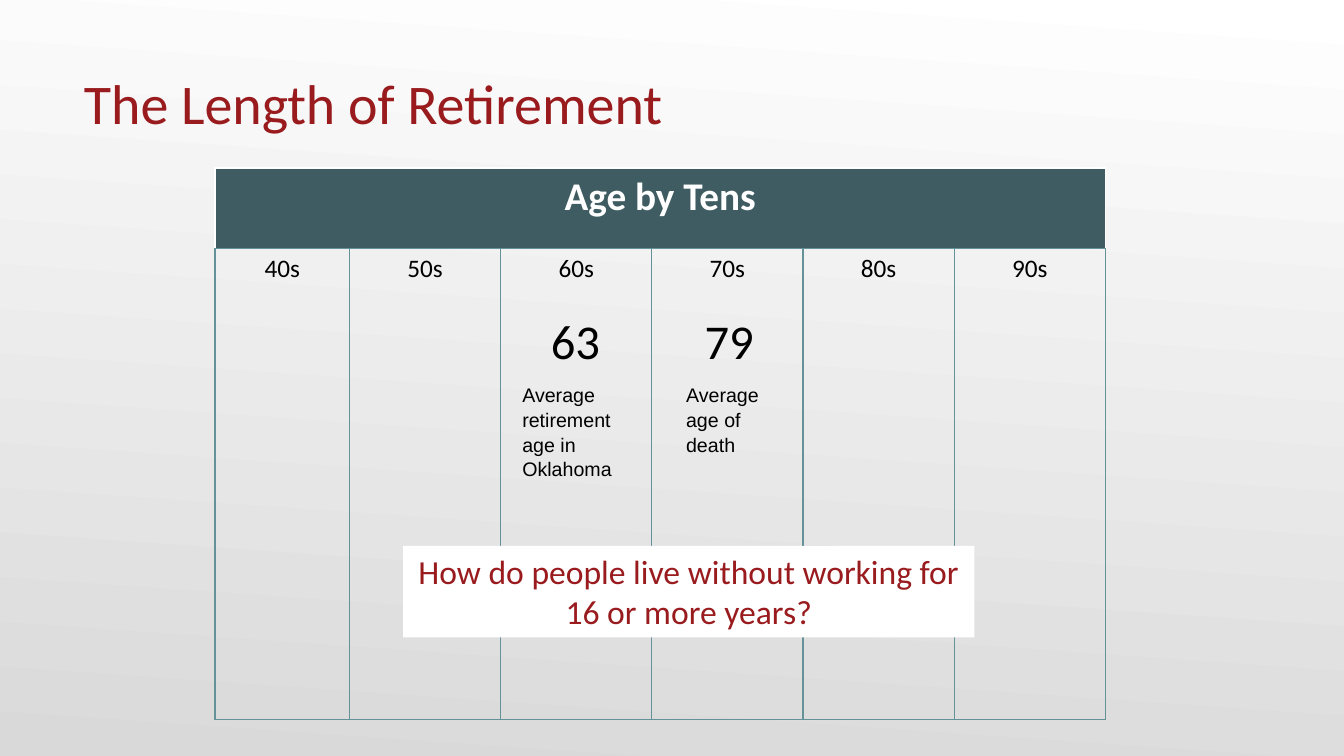
from lxml.etree import SubElement
from pptx import Presentation
from pptx.dml.color import RGBColor
from pptx.enum.shapes import MSO_SHAPE as Shape
from pptx.enum.text import MSO_ANCHOR as Anchor, PP_ALIGN as Align
from pptx.oxml.ns import qn
from pptx.util import Inches, Pt

WHITE = RGBColor(0xFF, 0xFF, 0xFF)
GREY = RGBColor(0xD9, 0xD9, 0xD9)
BLACK = RGBColor(0, 0, 0)
RED = RGBColor(0x99, 0x1B, 0x1E)
TEAL = RGBColor(0x3E, 0x5C, 0x61)
RULE = RGBColor(0x65, 0x92, 0x98)

COLS, ROWS = 160, 90


class Deck:
    """A slide laid out on a grid of COLS by ROWS equal units."""

    def __init__(self):
        self.prs = Presentation()
        self.prs.slide_width, self.prs.slide_height = Inches(13.33), Inches(7.5)
        self.s = self.prs.slides.add_slide(self.prs.slide_layouts[6])

    def x(self, cols):
        return round(self.prs.slide_width * cols / COLS)

    def y(self, rows):
        return round(self.prs.slide_height * rows / ROWS)

    def place(self, left, top, width, height):
        return self.x(left), self.y(top), self.x(width), self.y(height)

    def background(self, start, end, angle):
        fill = self.s.background.fill
        fill.gradient()
        fill.gradient_angle = angle
        for stop, color in zip(fill.gradient_stops, (start, end)):
            stop.color.rgb = color

    def add_words(self, tf, text, size, color, align=Align.CENTER, name="Calibri",
                  bold=False, spacing=1.0):
        p = tf.paragraphs[0]
        p.alignment, p.line_spacing = align, spacing
        r = p.add_run()
        r.text = text
        for key, value in {"size": Pt(size), "name": name, "bold": bold}.items():
            setattr(r.font, key, value)
        r.font.color.rgb = color

    def text(self, at, text, size, color, frame=None, **style):
        tf = self.s.shapes.add_textbox(*self.place(*at)).text_frame
        for key, value in {"word_wrap": True, **(frame or {})}.items():
            setattr(tf, key, value)
        self.add_words(tf, text, size, color, **style)

    def panel(self, at, text, size, color, fill):
        sp = self.s.shapes.add_shape(Shape.RECTANGLE, *self.place(*at))
        sp.shadow.inherit = False
        sp.fill.solid()
        sp.fill.fore_color.rgb = fill
        sp.line.fill.background()
        sp.text_frame.vertical_anchor = Anchor.TOP
        self.add_words(sp.text_frame, text, size, color)

    def borders(self, cell, **sides):
        """Draw 1 pt borders; sides maps L, R, T and B to colours."""
        tc_pr = cell._tc.get_or_add_tcPr()
        for side, color in sides.items():
            ln = SubElement(tc_pr, qn(f"a:ln{side}"), w=str(Pt(1)))
            SubElement(SubElement(ln, qn("a:solidFill")), qn("a:srgbClr"), val=str(color))

    def table(self, left, top, widths, heights, title, labels):
        at = self.place(left, top, sum(widths), sum(heights))
        table = self.s.shapes.add_table(2, len(labels), *at).table
        for column, width in zip(table.columns, widths):
            column.width = self.x(width)
        for row, height in zip(table.rows, heights):
            row.height = self.y(height)
        for i, label in enumerate(labels):
            head, body = table.cell(0, i), table.cell(1, i)
            self.borders(head, L=WHITE, R=WHITE, T=WHITE, B=RULE)
            head.fill.solid()
            head.fill.fore_color.rgb = TEAL
            self.borders(body, L=RULE, R=RULE, T=RULE, B=RULE)
            body.fill.background()
            self.add_words(body.text_frame, label, 18, BLACK)
        head = table.cell(0, 0)
        head.merge(table.cell(0, len(labels) - 1))
        self.add_words(head.text_frame, title, 28, WHITE, bold=True)


def main():
    deck = Deck()
    deck.background(WHITE, GREY, 266)
    decades = [f"{age}s" for age in range(40, 100, 10)]
    deck.table(25.6, 20, [16] + [18] * 5, [9.6, 56.1], "Age by Tens", decades)
    deck.panel((48, 65, 68, 10.9),
               "How do people live without working for 16 or more years?", 24, RED, WHITE)
    milestones = [
        ("63", 64, "Average retirement age in Oklahoma", 61, 12.5),
        ("79", 82.3, "Average age of death", 80.5, 9.7),
    ]
    for age, age_left, note, note_left, note_height in milestones:
        deck.text((age_left, 36.4, 9, 9.1), age, 34.7, BLACK)
        deck.text((note_left, 44.9, 15, note_height), note, 14, BLACK,
                  align=Align.LEFT, name="Arial", spacing=1.05)
    deck.text((10, 3, 139, 13.2), "The Length of Retirement", 40, RED,
              {"vertical_anchor": Anchor.BOTTOM, "margin_left": 0,
               "margin_right": 0, "margin_bottom": 0}, align=Align.LEFT)
    deck.prs.save("out.pptx")


if __name__ == "__main__":
    main()
